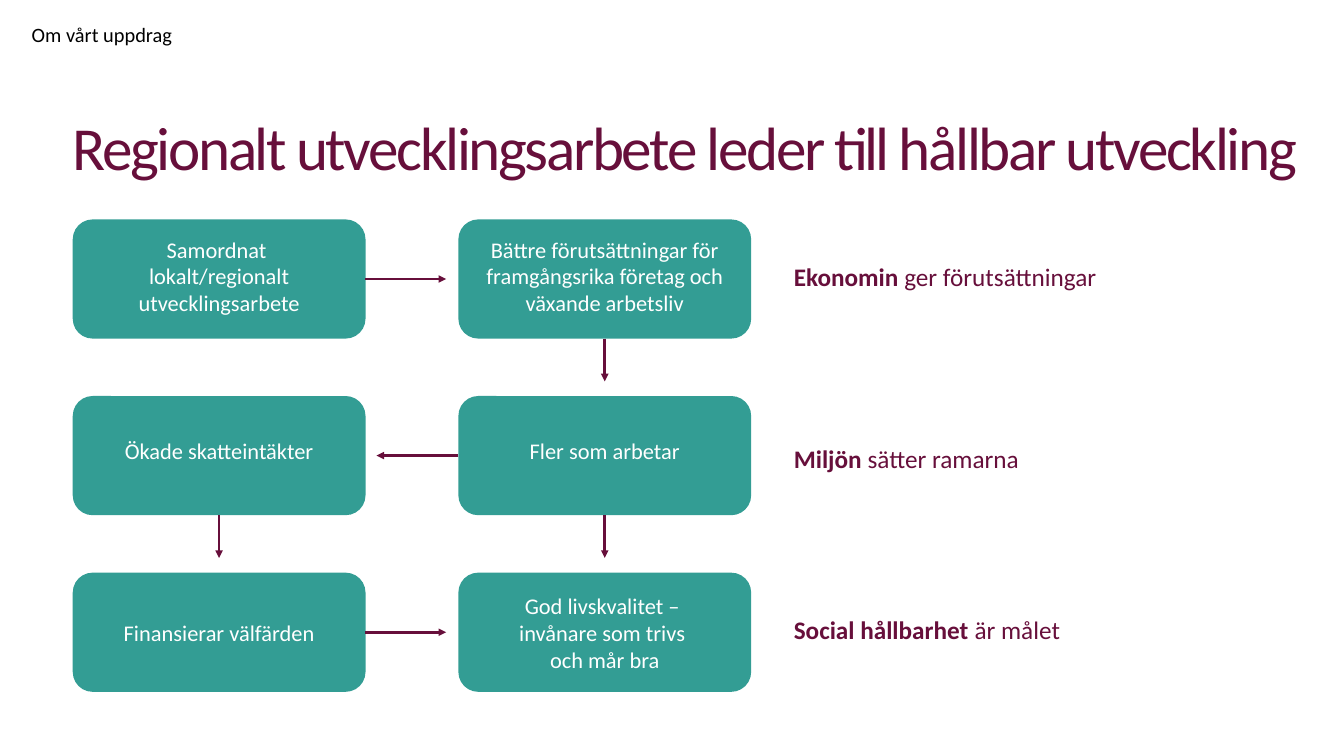
from lxml import etree
from pptx import Presentation
from pptx import util as u
from pptx.dml.color import RGBColor
from pptx.enum import shapes, text
from pptx.oxml.ns import qn

INK = {"plum": "670F3B", "teal": "339D94", "white": "FFFFFF", "black": "000000"}
RIGHT, LEFT, DOWN = 3, 1, 2
STEP = {RIGHT: (1.32, 0), LEFT: (-1.34, 0), DOWN: (0, 0.7)}


class Deck:
    font = "Calibri"

    def __init__(self, wide, high):
        self.prs = Presentation()
        self.prs.slide_width = u.Inches(wide)
        self.prs.slide_height = u.Inches(high)
        self.slide = self.prs.slides.add_slide(self.prs.slide_layouts[6])

    def run(self, para, words, size, ink, bold=False):
        run = para.add_run()
        run.text = words
        run.font.name = self.font
        run.font.size = u.Pt(size)
        run.font.bold = bold
        run.font.color.rgb = RGBColor.from_string(INK[ink])
        return run

    def text(self, x, y, w, h):
        frame = self.slide.shapes.add_textbox(*map(u.Inches, (x, y, w, h))).text_frame
        frame.word_wrap = True
        return frame

    def title(self, words, x, y, w, h):
        frame = self.text(x, y, w, h)
        frame.margin_left = frame.margin_right = 0
        frame.margin_top = frame.margin_bottom = 0
        frame.vertical_anchor = text.MSO_ANCHOR.BOTTOM
        para = frame.paragraphs[0]
        para.line_spacing = 0.85
        run = self.run(para, words, 72, "plum")
        run.font._element.set("spc", "-280")

    def label(self, lead, rest, x, y):
        para = self.text(x, y, 5.84, 0.6).paragraphs[0]
        self.run(para, lead, 29.7, "plum", True)
        self.run(para, rest, 29.7, "plum")

    def box(self, lines, x, y, lift):
        """Rounded box whose centred text sits `lift` inches above the middle."""
        box = self.slide.shapes.add_shape(
            shapes.MSO_SHAPE.ROUNDED_RECTANGLE, *map(u.Inches, (x, y, 4.79, 1.95)))
        box.shadow.inherit = False
        box.fill.solid()
        box.fill.fore_color.rgb = RGBColor.from_string(INK["teal"])
        box.line.fill.background()
        frame = box.text_frame
        frame.word_wrap = True
        frame.vertical_anchor = text.MSO_ANCHOR.MIDDLE
        frame.margin_bottom = u.Inches(0.05 + 2 * lift)
        para = frame.paragraphs[0]
        para.alignment = text.PP_ALIGN.CENTER
        for i, line in enumerate(lines):
            if i:
                para.add_line_break()
            self.run(para, line, 26.4, "white")
        return box

    def arrow(self, box, side):
        """Arrow that leaves one side of a box and stops short of the next."""
        dx, dy = map(u.Inches, STEP[side])
        mid = box.left + box.width // 2, box.top + box.height // 2
        x = {RIGHT: box.left + box.width, LEFT: box.left, DOWN: mid[0]}[side]
        y = box.top + box.height if side == DOWN else mid[1]
        line = self.slide.shapes.add_connector(
            shapes.MSO_CONNECTOR.STRAIGHT, x, y, x + dx, y + dy)
        line.begin_connect(box, side)
        line.line.width = u.Pt(3)
        line.line.color.rgb = RGBColor.from_string(INK["plum"])
        etree.SubElement(line.line._get_or_add_ln(), qn("a:tailEnd"), type="triangle")
        etree.SubElement(line._element.spPr, qn("a:effectLst"))


def main():
    deck = Deck(21.99, 12.37)
    deck.title("Regionalt utvecklingsarbete leder till hållbar utveckling",
               1.19, 1.23, 20.63, 1.76)
    head = deck.text(0.42, 0.31, 5.95, 0.5)
    deck.run(head.paragraphs[0], "Om vårt uppdrag", 24, "black")

    cols, top, pitch = (1.19, 7.5), 3.59, 2.89
    rows = [
        (0.05, ["Samordnat ", "lokalt/regionalt utvecklingsarbete"],
         ["Bättre förutsättningar för framgångsrika företag och växande arbetsliv"]),
        (0.08, ["Ökade skatteintäkter"], ["Fler som arbetar"]),
        (0, ["Finansierar välfärden"],
         ["God livskvalitet – ", "invånare som trivs ", "och mår bra"]),
    ]
    grid = [[deck.box(lines, x, top + r * pitch, lift) for x, lines in zip(cols, cells)]
            for r, (lift, *cells) in enumerate(rows)]

    for row, col, side in [(0, 0, RIGHT), (0, 1, DOWN), (1, 1, LEFT),
                           (1, 1, DOWN), (1, 0, DOWN), (2, 0, RIGHT)]:
        deck.arrow(grid[row][col], side)

    for y, lead, rest in [(4.22, "Ekonomin ", "ger förutsättningar"),
                          (7.2, "Miljön ", "sätter ramarna"),
                          (10.01, "Social hållbarhet ", "är målet")]:
        deck.label(lead, rest, 12.89, y)

    deck.prs.save("out.pptx")


if __name__ == "__main__":
    main()
